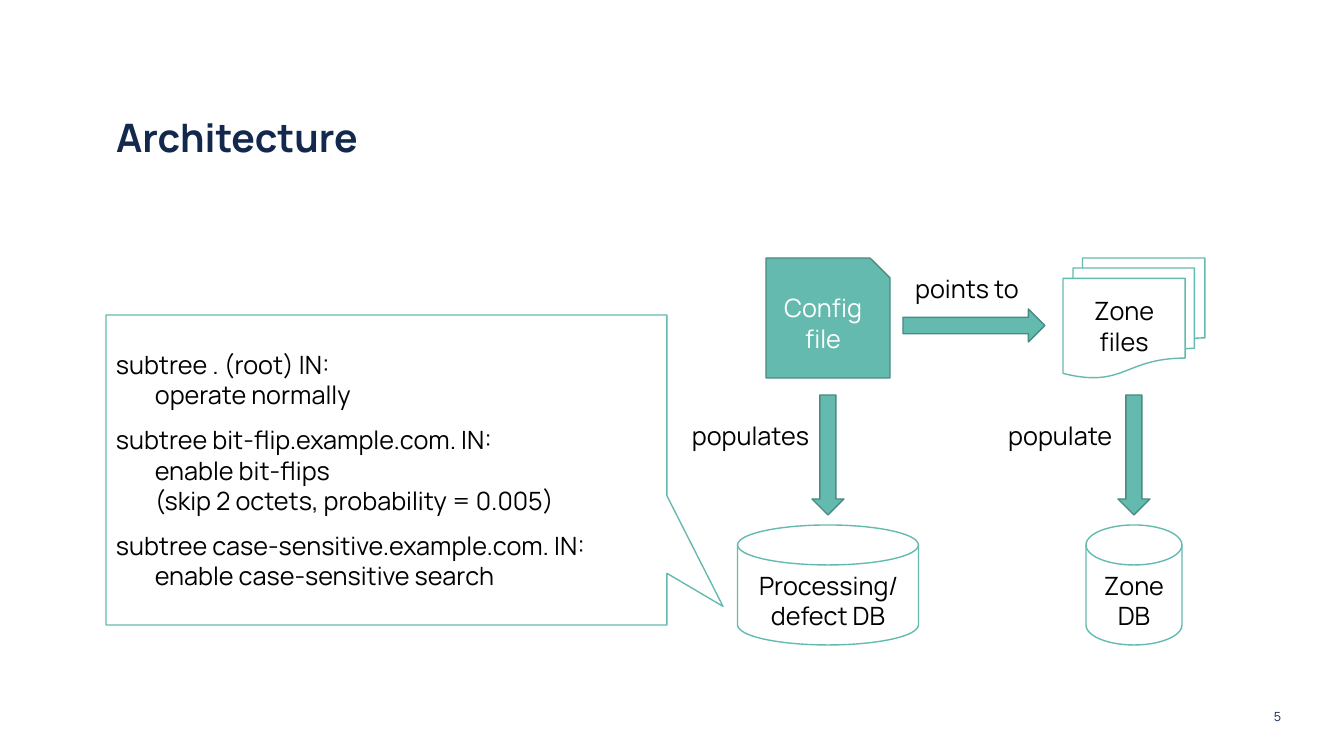
from dataclasses import dataclass

from pptx import Presentation
from pptx.dml.color import RGBColor
from pptx.enum.shapes import MSO_SHAPE
from pptx.enum.text import MSO_ANCHOR, PP_ALIGN
from pptx.util import Pt

DISK = MSO_SHAPE.FLOWCHART_MAGNETIC_DISK
DOCS = MSO_SHAPE.FLOWCHART_MULTIDOCUMENT
SNIP = MSO_SHAPE.SNIP_1_RECTANGLE
RIGHT_ARROW = MSO_SHAPE.RIGHT_ARROW
DOWN_ARROW = MSO_SHAPE.DOWN_ARROW
CALLOUT = MSO_SHAPE.RECTANGULAR_CALLOUT
LEFT, CENTER, RIGHT = PP_ALIGN.LEFT, PP_ALIGN.CENTER, PP_ALIGN.RIGHT
TOP, MIDDLE, BOTTOM = MSO_ANCHOR.TOP, MSO_ANCHOR.MIDDLE, MSO_ANCHOR.BOTTOM


@dataclass(frozen=True)
class Theme:
    font: str = "Manrope"
    navy: str = "12284C"
    teal: str = "65BAAF"
    teal_dark: str = "4B8A81"
    white: str = "FFFFFF"
    black: str = "000000"
    title: int = 28
    body: int = 18
    small: int = 9


T = Theme()

# Content
TITLE = "Architecture"
PAGE = "5"
RULES = [
    ("subtree . (root) IN:", "operate normally"),
    ("subtree bit-flip.example.com. IN:",
     "enable bit-flips\v(skip 2 octets, probability = 0.005)"),
    ("subtree case-sensitive.example.com. IN:", "enable case-sensitive search"),
]

# Layout in px: two columns by centre, three rows by top
CONFIG_X, ZONE_X = 828, 1134
FILE_Y, ARROW_Y, DB_Y = 258, 395, 525
NODE_H, ARROW_W = 120, 32
RULE_INDENT = 39
NODES = [  # kind, column centre, top, width, text, solid
    (DISK, ZONE_X, DB_Y, 96, "Zone DB", False),
    (DOCS, ZONE_X, FILE_Y, 142, "Zone files", False),
    (SNIP, CONFIG_X, FILE_Y, 124, "Config file", True),
    (DISK, CONFIG_X, DB_Y, 181, "Processing/defect DB", False),
    (DOWN_ARROW, CONFIG_X, ARROW_Y, ARROW_W, "", True),
    (DOWN_ARROW, ZONE_X, ARROW_Y, ARROW_W, "", True),
]
LABELS = [  # left, top, width, text, alignment
    (666, 415, 153, "populates", RIGHT),
    (896, 268, 142, "points to", CENTER),
    (946, 415, 176, "populate", RIGHT),
]


def px(n):
    return round(n * 914400 / 100.8)


def rgb(color):
    return RGBColor.from_string(color)


def write(tf, paragraphs, size=T.body, color=T.black, bold=False,
          align=LEFT, anchor=TOP):
    """Fill a frame; each paragraph is (text, indent in px, line spacing)."""
    tf.word_wrap = True
    tf.vertical_anchor = anchor
    for i, (text, indent, spacing) in enumerate(paragraphs):
        p = tf.add_paragraph() if i else tf.paragraphs[0]
        p.text = text
        p.alignment = align
        p.line_spacing = spacing
        if indent:
            p._p.get_or_add_pPr().set("marL", str(px(indent)))
        for r in p.runs:
            r.font.name = T.font
            r.font.size = Pt(size)
            r.font.bold = bold
            r.font.color.rgb = rgb(color)


def add_shape(kind, x, y, w, h, solid=False):
    sp = slide.shapes.add_shape(kind, px(x), px(y), px(w), px(h))
    sp.shadow.inherit = False
    sp.fill.solid()
    sp.fill.fore_color.rgb = rgb(T.teal if solid else T.white)
    sp.line.color.rgb = rgb(T.teal_dark if solid else T.teal)
    sp.line.width = Pt(1)
    return sp


def add_label(x, y, w, h, text, **fmt):
    sp = slide.shapes.add_textbox(px(x), px(y), px(w), px(h))
    write(sp.text_frame, [(text, 0, 1.0)], **fmt)


prs = Presentation()
prs.slide_width, prs.slide_height = px(1344), px(756)
slide = prs.slides.add_slide(prs.slide_layouts[5])

# Title and page number
title = slide.shapes.title
title.left, title.top, title.width, title.height = px(106), px(59), px(1159), px(107)
write(title.text_frame, [(TITLE, 0, 0.9)], size=T.title, color=T.navy,
      bold=True, anchor=BOTTOM)
add_label(1221, 697, 70, 40, PAGE, size=T.small, color=T.navy,
          align=RIGHT, anchor=MIDDLE)

# Files, databases and the arrows between them
for kind, center, y, w, text, solid in NODES:
    sp = add_shape(kind, center - w / 2, y, w, NODE_H, solid)
    if text:
        write(sp.text_frame, [(text, 0, 1.0)], align=CENTER, anchor=MIDDLE,
              color=T.white if solid else T.black)
    if kind == DISK:
        sp.text_frame.margin_top = px(16)
add_shape(RIGHT_ARROW, 903, 309, 142, 33, solid=True)

# Callout with the processing rules
callout = add_shape(CALLOUT, 106, 315, 561, 310)
callout.adjustments[0], callout.adjustments[1] = 0.6, 0.44
rules = []
for i, (subtree, action) in enumerate(RULES):
    rules += [(subtree, 0, 1.5 if i else 1.0), (action, RULE_INDENT, 1.0)]
write(callout.text_frame, rules, anchor=MIDDLE)

# Arrow labels
for x, y, w, text, align in LABELS:
    add_label(x, y, w, 40, text, align=align)

prs.save("out.pptx")
